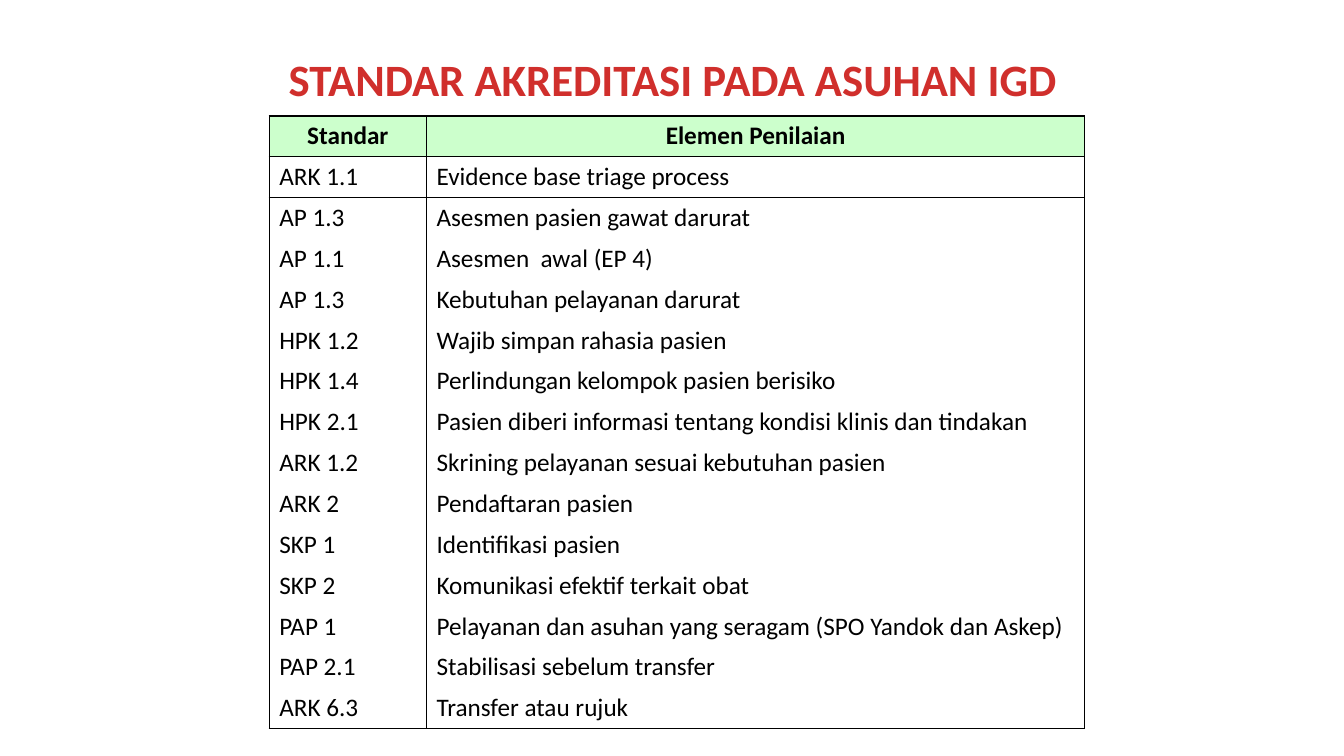
from lxml import etree
from pptx import Presentation
from pptx import util as u
from pptx.dml.color import RGBColor
from pptx.enum import text
from pptx.oxml.ns import qn

FONT = "Calibri"
BLACK, RED, GREEN = "000000", "D02F2C", "CCFFCC"
COLUMN_WIDTHS = (1.56, 6.53)
ROW_HEIGHT = 6.08 / 15
HEADER = ("Standar", "Elemen Penilaian")
STANDARDS = [
    ("ARK 1.1", "Evidence base triage process"),
    ("AP 1.3", "Asesmen pasien gawat darurat"),
    ("AP 1.1", "Asesmen  awal (EP 4)"),
    ("AP 1.3", "Kebutuhan pelayanan darurat"),
    ("HPK 1.2", "Wajib simpan rahasia pasien"),
    ("HPK 1.4", "Perlindungan kelompok pasien berisiko"),
    ("HPK 2.1", "Pasien diberi informasi tentang kondisi klinis dan tindakan"),
    ("ARK 1.2", "Skrining pelayanan sesuai kebutuhan pasien"),
    ("ARK 2", "Pendaftaran pasien"),
    ("SKP 1", "Identifikasi pasien"),
    ("SKP 2", "Komunikasi efektif terkait obat"),
    ("PAP 1", "Pelayanan dan asuhan yang seragam (SPO Yandok dan Askep)"),
    ("PAP 2.1", "Stabilisasi sebelum transfer"),
    ("ARK 6.3", "Transfer atau rujuk"),
]


def write(frame, wording, size, color, bold, align):
    paragraph = frame.paragraphs[0]
    paragraph.alignment = align
    run = paragraph.add_run()
    run.text = wording
    for name, value in {"name": FONT, "size": u.Pt(size), "bold": bold}.items():
        setattr(run.font, name, value)
    run.font.color.rgb = RGBColor.from_string(color)


def set_borders(cell, visible_sides):
    """Draw the sides named by L, R, T, B and hide the others."""
    properties = cell._tc.get_or_add_tcPr()
    for side in "LRTB":
        line = etree.SubElement(properties, qn(f"a:ln{side}"), w=str(u.Pt(1)))
        if side in visible_sides:
            fill = etree.SubElement(line, qn("a:solidFill"))
            etree.SubElement(fill, qn("a:srgbClr"), val=BLACK)
        else:
            etree.SubElement(line, qn("a:noFill"))


def add_title(slide, wording):
    title = slide.shapes.add_textbox(
        u.Inches(2.73), u.Inches(0.46), u.Inches(7.89), u.Inches(0.64))
    frame = title.text_frame
    frame.word_wrap = False
    frame.auto_size = text.MSO_AUTO_SIZE.SHAPE_TO_FIT_TEXT
    write(frame, wording, 32, RED, True, text.PP_ALIGN.CENTER)


def add_standards_table(slide):
    rows = [HEADER, *STANDARDS]
    table = slide.shapes.add_table(
        len(rows), len(HEADER), u.Inches(2.67), u.Inches(1.15),
        u.Inches(sum(COLUMN_WIDTHS)), u.Inches(ROW_HEIGHT * len(rows))).table
    table.first_row = table.horz_banding = False
    for column, width in zip(table.columns, COLUMN_WIDTHS):
        column.width = u.Inches(width)

    ruled_below = {0, 1, len(rows) - 1}
    for i, wordings in enumerate(rows):
        table.rows[i].height = u.Inches(ROW_HEIGHT)
        is_header = i == 0
        top = "T" if is_header or i - 1 in ruled_below else ""
        bottom = "B" if i in ruled_below else ""
        align = text.PP_ALIGN.CENTER if is_header else text.PP_ALIGN.LEFT
        for cell, wording in zip(table.rows[i].cells, wordings):
            set_borders(cell, "LR" + top + bottom)
            if is_header:
                cell.fill.solid()
                cell.fill.fore_color.rgb = RGBColor.from_string(GREEN)
            else:
                cell.fill.background()
            write(cell.text_frame, wording, 18, BLACK, is_header, align)


def main():
    deck = Presentation()
    deck.slide_width, deck.slide_height = u.Inches(13.33), u.Inches(7.5)
    slide = deck.slides.add_slide(deck.slide_layouts[6])
    add_title(slide, "STANDAR AKREDITASI PADA ASUHAN IGD")
    add_standards_table(slide)
    deck.save("out.pptx")


if __name__ == "__main__":
    main()
